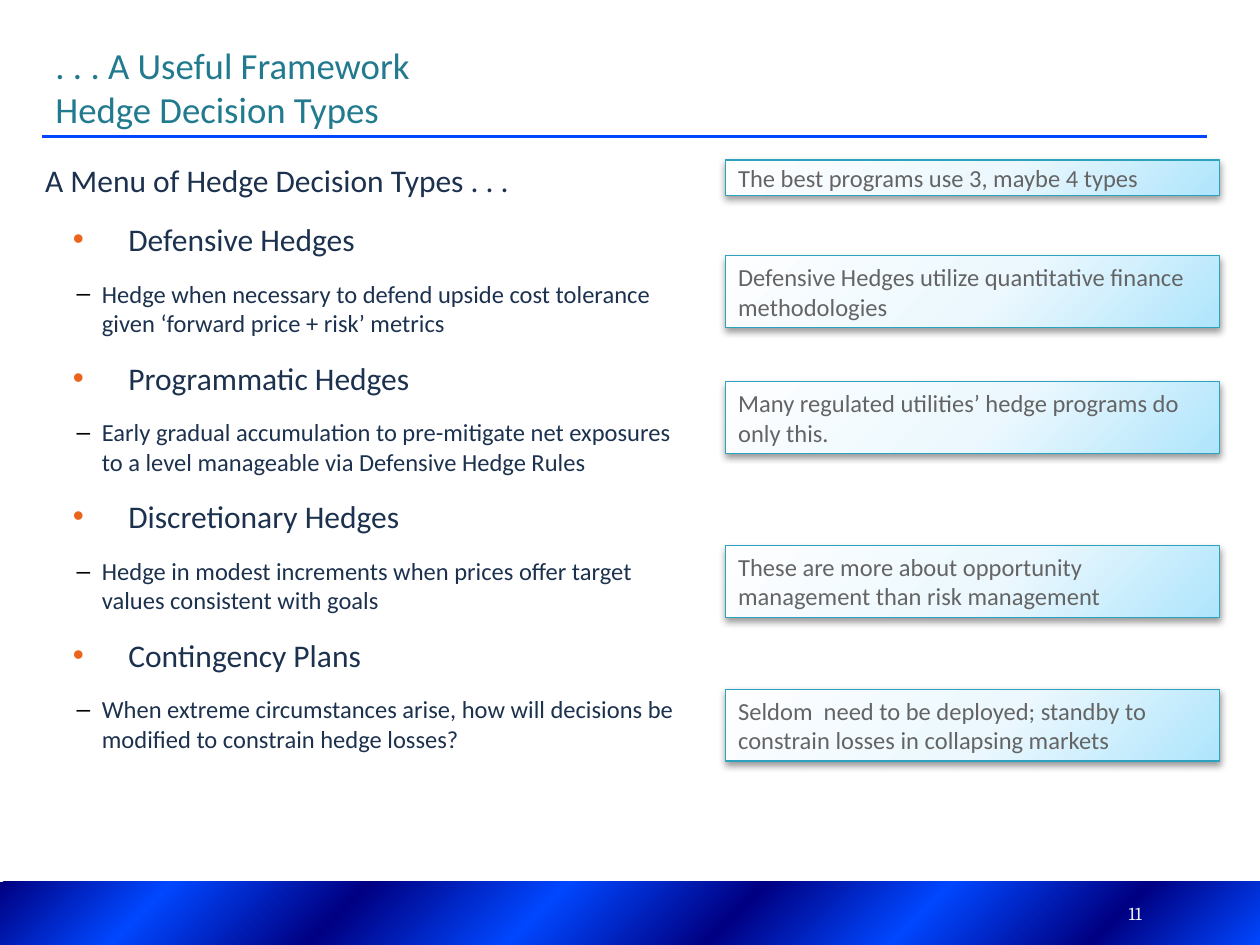
from lxml import etree
from pptx import Presentation
from pptx.dml.color import RGBColor
from pptx.enum.shapes import MSO_CONNECTOR, MSO_SHAPE
from pptx.enum.text import MSO_ANCHOR, MSO_AUTO_SIZE, PP_ALIGN
from pptx.oxml.ns import qn
from pptx.util import Inches, Pt

RECTANGLE = MSO_SHAPE.RECTANGLE
STRAIGHT = MSO_CONNECTOR.STRAIGHT
TOP, MIDDLE, BOTTOM = MSO_ANCHOR.TOP, MSO_ANCHOR.MIDDLE, MSO_ANCHOR.BOTTOM
LEFT, CENTER = PP_ALIGN.LEFT, PP_ALIGN.CENTER
NO_AUTOFIT = MSO_AUTO_SIZE.NONE

COLORS = {
    "title": "227A8F", "body": "1C314E", "note": "646464", "note_line": "2DA2BF",
    "bullet": "EB641B", "dash": "000000", "rule": "0047FF", "number": "F2F2F2",
    "shadow": "000000", "navy": "000082", "blue": "0047FF",
}
FOOTER_STOPS = [(position, COLORS["blue" if index % 2 else "navy"])
                for index, position in enumerate((0, 13, 28, 43, 58, 72, 87, 100))]
NOTE_STOPS = [(0, "FDFEFF"), (55, "ECF8FE"), (100, "AFE5FC")]

# Left indent, first-line indent, size, bullet and bullet colour
HEADING = (0.3, -0.21, 18, None, None)
HEDGE_TYPE = (0.75, -0.44, 18, "•", "bullet")
DETAIL = (0.54, -0.2, 14, "–", "dash")

HEDGE_TYPES = [
    ("Defensive Hedges",
     "Hedge when necessary to defend upside cost tolerance given ‘forward price + risk’ metrics"),
    ("Programmatic Hedges",
     "Early gradual accumulation to pre-mitigate net exposures to a level manageable "
     "via Defensive Hedge Rules"),
    ("Discretionary Hedges",
     "Hedge in modest increments when prices offer target values consistent with goals"),
    ("Contingency Plans",
     "When extreme circumstances arise, how will decisions be modified to constrain hedge losses?"),
]
NOTES = [
    (1.27, 0.28, "The best programs use 3, maybe 4 types"),
    (2.03, 0.57, "Defensive Hedges utilize quantitative finance methodologies"),
    (3.03, 0.57, "Many regulated utilities’ hedge programs do only this."),
    (4.33, 0.57, "These are more about opportunity management than risk management"),
    (5.47, 0.57, "Seldom  need to be deployed; standby to constrain losses in collapsing markets"),
]


def add_element(parent, tag, **attributes):
    return etree.SubElement(parent, qn(tag), {key: str(value) for key, value in attributes.items()})


class SlideBuilder:
    def __init__(self, slide, font="Calibri"):
        self.slide = slide
        self.font = font

    def color(self, name):
        return RGBColor.from_string(COLORS[name])

    def frame(self, shape, anchor):
        frame = shape.text_frame
        frame.word_wrap = True
        frame.auto_size = NO_AUTOFIT
        frame.vertical_anchor = anchor
        return frame

    def set_text(self, paragraph, text, size, color, align=LEFT, font=None):
        paragraph.text = text
        paragraph.alignment = align
        paragraph.font.name = font or self.font
        paragraph.font.size = Pt(size)
        paragraph.font.color.rgb = self.color(color)

    def indent(self, paragraph, left, first, bullet=None, bullet_color=None):
        properties = paragraph._p.get_or_add_pPr()
        properties.set("marL", str(Inches(left)))
        properties.set("indent", str(Inches(first)))
        if bullet:
            color = add_element(properties, "a:buClr")
            add_element(color, "a:srgbClr", val=COLORS[bullet_color])
            add_element(properties, "a:buFont", typeface="Arial")
            add_element(properties, "a:buChar", char=bullet)
        else:
            add_element(properties, "a:buNone")

    def gradient_box(self, left, top, width, height, stops):
        shape = self.slide.shapes.add_shape(
            RECTANGLE, Inches(left), Inches(top), Inches(width), Inches(height))
        shape.shadow.inherit = False
        shape.line.fill.background()
        shape.fill.gradient()
        shape.fill.gradient_angle = 315
        stop_list = shape._element.spPr.find(".//" + qn("a:gsLst"))
        for stop in list(stop_list):
            stop_list.remove(stop)
        for position, color in stops:
            stop = add_element(stop_list, "a:gs", pos=position * 1000)
            add_element(stop, "a:srgbClr", val=color)
        return shape

    def title(self, lines):
        shape = self.slide.shapes.title
        shape.left, shape.top = Inches(0.25), Inches(0.17)
        shape.width, shape.height = Inches(6.17), Inches(0.92)
        frame = self.frame(shape, BOTTOM)
        for index, line in enumerate(lines):
            paragraph = frame.add_paragraph() if index else frame.paragraphs[0]
            self.indent(paragraph, 0.3, -0.21)
            self.set_text(paragraph, line, 21, "title")

    def rule(self, left, right, top):
        line = self.slide.shapes.add_connector(
            STRAIGHT, Inches(left), Inches(top), Inches(right), Inches(top))
        line.line.color.rgb = self.color("rule")
        line.line.width = Pt(1.75)
        add_element(line._element.spPr, "a:effectLst")

    def text_box(self, left, top, width, height, anchor=TOP):
        shape = self.slide.shapes.add_textbox(
            Inches(left), Inches(top), Inches(width), Inches(height))
        return self.frame(shape, anchor)

    def outline(self, items):
        frame = self.text_box(0.17, 1.23, 5.38, 5.57)
        for index, (text, style) in enumerate(items):
            left, first, size, bullet, bullet_color = style
            paragraph = frame.add_paragraph() if index else frame.paragraphs[0]
            paragraph.level = 1 if style is DETAIL else 0
            paragraph.space_after = Pt(12)
            self.indent(paragraph, left, first, bullet, bullet_color)
            self.set_text(paragraph, text, size, "body")

    def note(self, top, height, text):
        shape = self.gradient_box(5.76, top, 3.92, height, NOTE_STOPS)
        shape.line.color.rgb = self.color("note_line")
        shape.line.width = Pt(0.75)
        effects = shape._element.spPr.find(qn("a:effectLst"))
        shadow = add_element(effects, "a:outerShdw", blurRad=Pt(4.1), dist=Pt(2),
                             dir=90 * 60000, rotWithShape=0)
        color = add_element(shadow, "a:srgbClr", val=COLORS["shadow"])
        add_element(color, "a:alpha", val=40000)
        self.set_text(self.frame(shape, MIDDLE).paragraphs[0], text, 14, "note")


def main():
    presentation = Presentation()
    presentation.slide_width, presentation.slide_height = Inches(10), Inches(7.5)
    builder = SlideBuilder(presentation.slides.add_slide(presentation.slide_layouts[5]))

    # Footer band, slide number and title rule
    builder.gradient_box(0, 7, 10, 0.5, FOOTER_STOPS)
    number = builder.text_box(8.6, 7.05, 0.82, 0.4, MIDDLE)
    builder.set_text(number.paragraphs[0], "11", 10.5, "number", CENTER, "Cambria")
    builder.rule(0.33, 9.58, 1.08)

    # Title and menu of hedge types
    builder.title([". . . A Useful Framework", "Hedge Decision Types"])
    items = [("A Menu of Hedge Decision Types . . .", HEADING)]
    for name, detail in HEDGE_TYPES:
        items += [(name, HEDGE_TYPE), (detail, DETAIL)]
    builder.outline(items)

    # Side notes
    for top, height, text in NOTES:
        builder.note(top, height, text)

    presentation.save("out.pptx")


if __name__ == "__main__":
    main()
